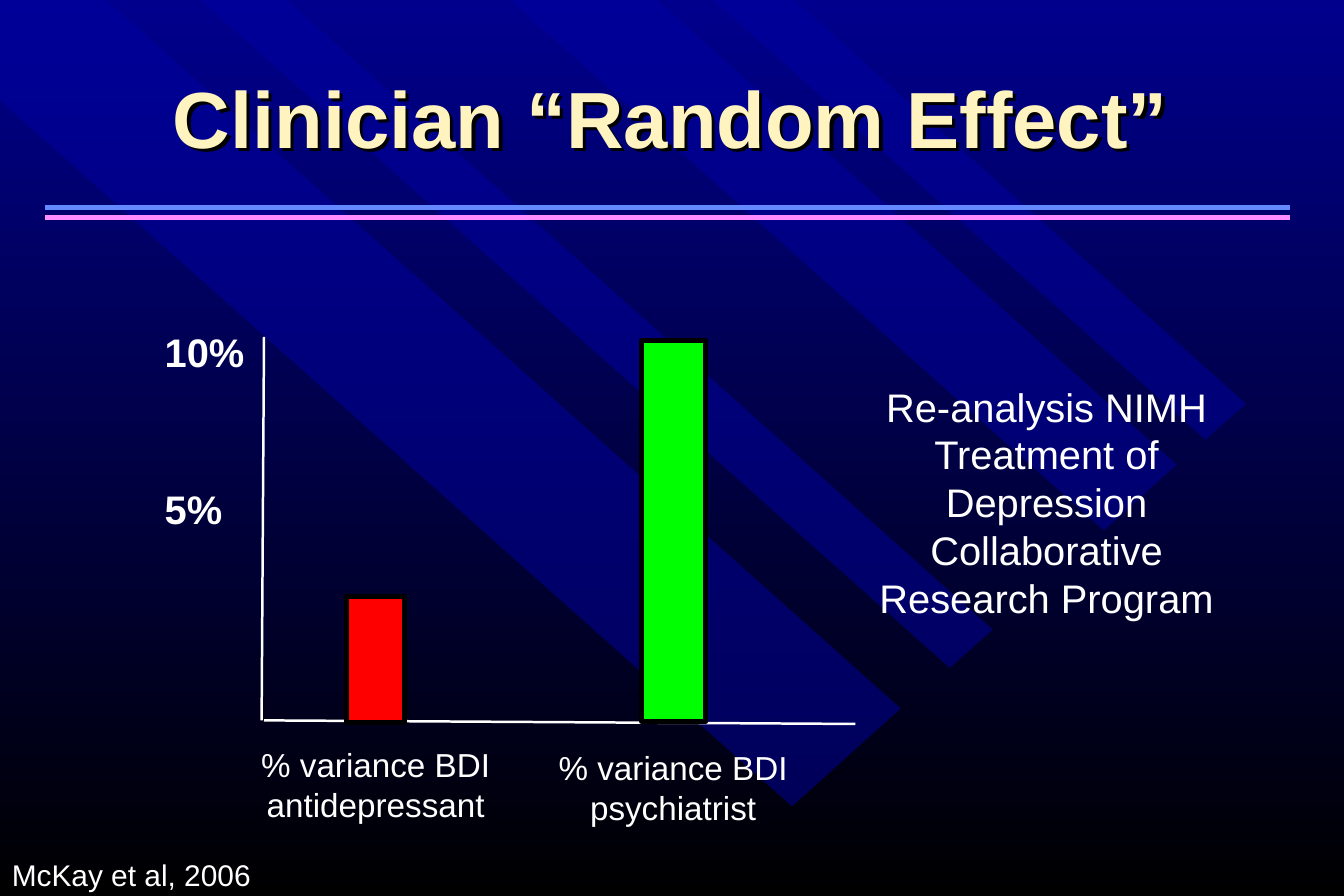
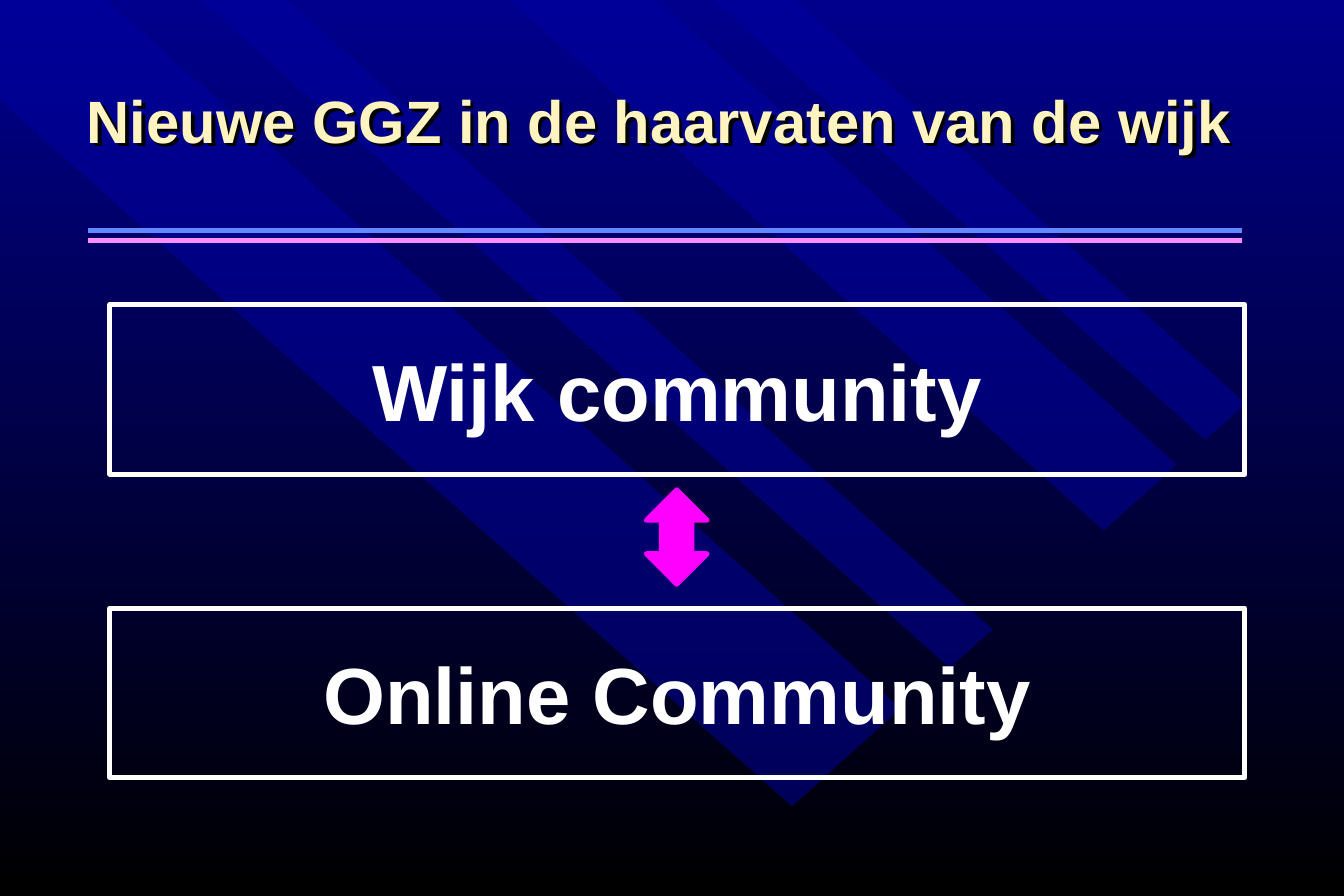
import pptx
import pptx.util
import pptx.dml.color
import pptx.enum.shapes
import pptx.enum.text
import pptx.oxml
import pptx.oxml.ns

Inches = pptx.util.Inches
Pt = pptx.util.Pt
RGBColor = pptx.dml.color.RGBColor
SHAPE = pptx.enum.shapes.MSO_SHAPE
LINK = pptx.enum.shapes.MSO_CONNECTOR
ALIGN = pptx.enum.text.PP_ALIGN
ANCHOR = pptx.enum.text.MSO_ANCHOR
qn = pptx.oxml.ns.qn

# Shared look
NAVY = RGBColor(0x00, 0x00, 0x8C)
BAND = RGBColor(0x00, 0x00, 0xA4)
BLACK = RGBColor(0x00, 0x00, 0x00)
WHITE = RGBColor(0xFF, 0xFF, 0xFF)
CREAM = RGBColor(0xFF, 0xF3, 0xBF)
SKY = RGBColor(0x63, 0x88, 0xFF)
PINK = RGBColor(0xFF, 0x8D, 0xFF)
RED = RGBColor(0xFF, 0x00, 0x00)
GREEN = RGBColor(0x00, 0xFF, 0x00)
MAGENTA = RGBColor(0xFF, 0x00, 0xFF)
FONT = "Arial"

BANDS = [
    [(7.54, 5.93), (0.89, 0), (0, 0), (0, 0.84), (6.63, 6.75)],
    [(2.4, 0), (8.31, 5.27), (7.95, 5.59), (1.68, 0)],
    [(5.5, 0), (9.85, 3.89), (9.24, 4.44), (4.27, 0)],
    [(5.97, 0), (10.09, 3.68), (10.43, 3.38), (6.65, 0)],
]
SHADE = (
    '<a:effectLst xmlns:a="http://schemas.openxmlformats.org/drawingml/2006/main">'
    '<a:outerShdw dist="36000" dir="2700000" algn="ctr" rotWithShape="0">'
    '<a:srgbClr val="000000"/></a:outerShdw></a:effectLst>'
)


def add_child(node, tag, **attrs):
    child = node.makeelement(qn(tag), attrs)
    node.append(child)
    return child


def set_back(master):
    fill = master.background.fill
    fill.gradient()
    fill.gradient_angle = 270
    for stop, color in zip(fill.gradient_stops, (NAVY, BLACK)):
        stop.color.rgb = color


def add_band(slide, points):
    spots = [(Inches(x), Inches(y)) for x, y in points]
    pen = slide.shapes.build_freeform(*spots[0], scale=1.0)
    pen.add_line_segments(spots[1:], close=True)
    band = pen.convert_to_shape()
    band.shadow.inherit = False
    band.fill.solid()
    band.fill.fore_color.rgb = BAND
    band.line.fill.background()
    color = band.fill._xPr.find(qn("a:solidFill"))[0]
    add_child(color, "a:alpha", val="50000")


def add_line(slide, start, end, color, width):
    ends = [Inches(v) for v in (*start, *end)]
    line = slide.shapes.add_connector(LINK.STRAIGHT, *ends)
    line.line.color.rgb = color
    line.line.width = Pt(width)
    add_child(line._element.spPr, "a:effectLst")


def write(frame, text, size, color=WHITE, bold=False, align=ALIGN.CENTER):
    frame.word_wrap = True
    para = frame.paragraphs[0]
    para.alignment = align
    run = para.add_run()
    run.text = text
    for key, value in {"name": FONT, "size": Pt(size), "bold": bold}.items():
        setattr(run.font, key, value)
    run.font.color.rgb = color
    return para


def add_text(slide, box, text, size, **style):
    label = slide.shapes.add_textbox(*[Inches(v) for v in box])
    write(label.text_frame, text, size, **style)
    return label


def add_shape(slide, kind, box, line, fill=None):
    shape = slide.shapes.add_shape(kind, *[Inches(v) for v in box])
    shape.shadow.inherit = False
    if fill is None:
        shape.fill.background()
    else:
        shape.fill.solid()
        shape.fill.fore_color.rgb = fill
    shape.line.color.rgb = line
    shape.line.width = Pt(3)
    return shape


def add_title(slide, box, text, size):
    title = add_text(slide, box, text, size, color=CREAM, bold=True)
    title.text_frame.vertical_anchor = ANCHOR.MIDDLE
    title.text_frame.paragraphs[0].line_spacing = 0.9
    title._element.spPr.append(pptx.oxml.parse_xml(SHADE))


def add_page(deck, text, size, box, left, right, top):
    """Slide with bands, title and the double rule."""
    slide = deck.slides.add_slide(deck.slide_layouts[6])
    for points in BANDS:
        add_band(slide, points)
    add_title(slide, box, text, size)
    for y, color in ((top, SKY), (top + 0.08, PINK)):
        add_line(slide, (left, y), (right, y), color, 3)
    return slide


def effect_page(deck):
    slide = add_page(deck, "Clinician “Random Effect”", 48,
                     (0.19, 0.36, 10.85, 1.33), 0.38, 10.8, 1.74)
    # Axes
    add_line(slide, (2.21, 2.82), (2.19, 6.03), WHITE, 1.5)
    add_line(slide, (7.16, 6.06), (2.21, 6.03), WHITE, 1.5)
    for y, mark in ((2.69, "10%"), (4.01, "5%")):
        add_text(slide, (1.28, y, 1.09, 0.5), mark, 24,
                 bold=True, align=ALIGN.LEFT)
    # Bars with their labels
    bars = [
        ((2.9, 4.99, 0.49, 1.06), RED, (1.99, 6.18), "antidepressant"),
        ((5.37, 2.85, 0.54, 3.19), GREEN, (4.48, 6.21), "psychiatrist"),
    ]
    for box, color, spot, name in bars:
        add_shape(slide, SHAPE.RECTANGLE, box, BLACK, color)
        add_text(slide, (*spot, 2.31, 0.77), "% variance BDI " + name, 20)
    # Source and remark
    add_text(slide, (0, 7.12, 2.58, 0.4), "McKay et al, 2006", 18,
             align=ALIGN.LEFT)
    add_text(slide, (7.03, 3.15, 3.46, 2.12),
             "Re-analysis NIMH Treatment of Depression "
             "Collaborative Research Program", 24)


def wijk_page(deck):
    slide = add_page(deck, "Nieuwe GGZ in de haarvaten van de wijk", 36,
                     (0.44, 0.54, 10.16, 1), 0.74, 10.4, 1.93)
    # Two frames and the arrow between them
    for y, name in ((2.55, "Wijk community"), (5.09, "Online Community")):
        frame = add_shape(slide, SHAPE.RECTANGLE, (0.92, y, 9.5, 1.42), WHITE)
        frame.text_frame.vertical_anchor = ANCHOR.MIDDLE
        write(frame.text_frame, name, 48, bold=True)
    add_shape(slide, SHAPE.UP_DOWN_ARROW, (5.41, 4.1, 0.51, 0.79),
              MAGENTA, MAGENTA)


def main():
    deck = pptx.Presentation()
    deck.slide_width = Inches(11.25)
    deck.slide_height = Inches(7.5)
    set_back(deck.slide_master)
    effect_page(deck)
    wijk_page(deck)
    deck.save("out.pptx")


if __name__ == "__main__":
    main()
